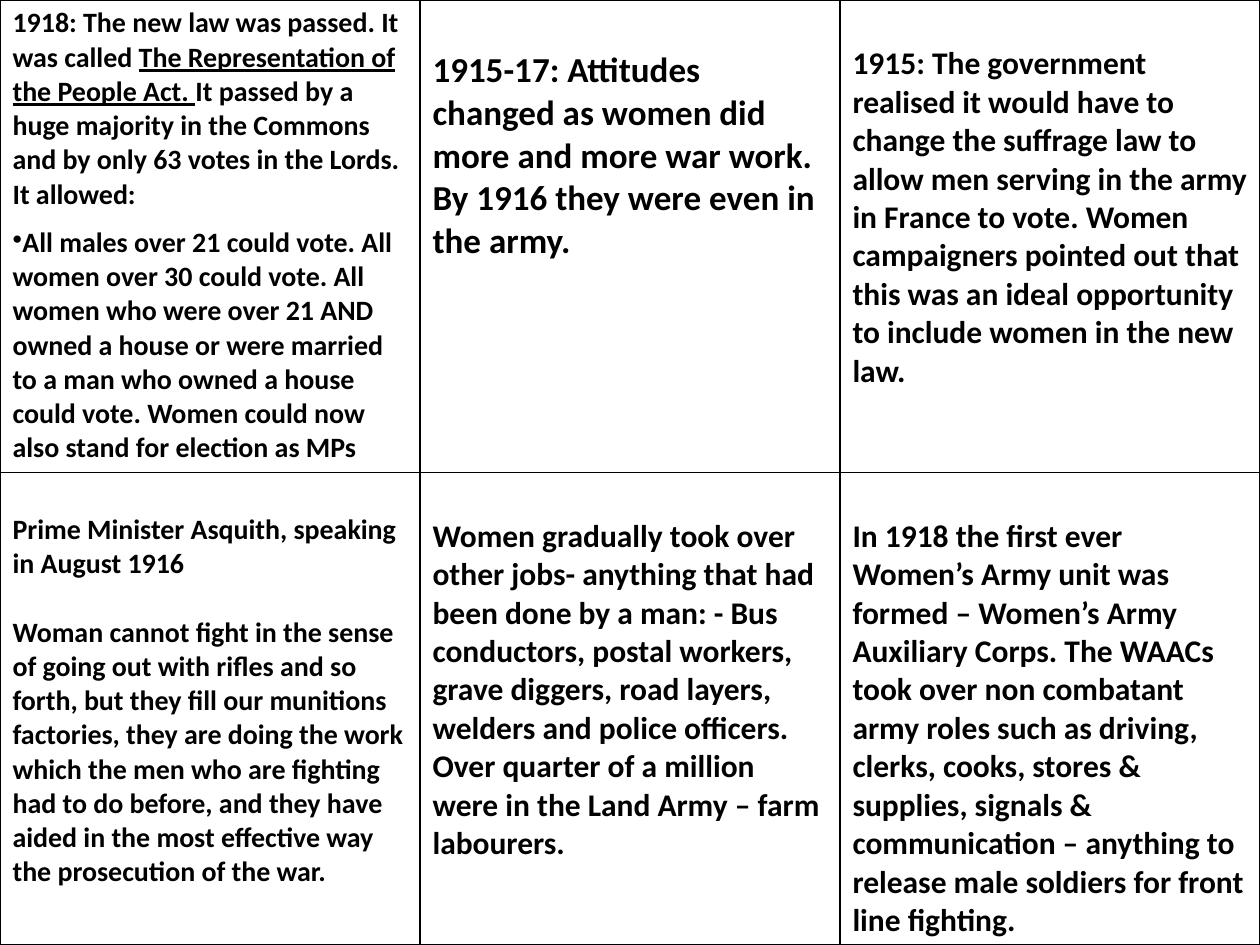
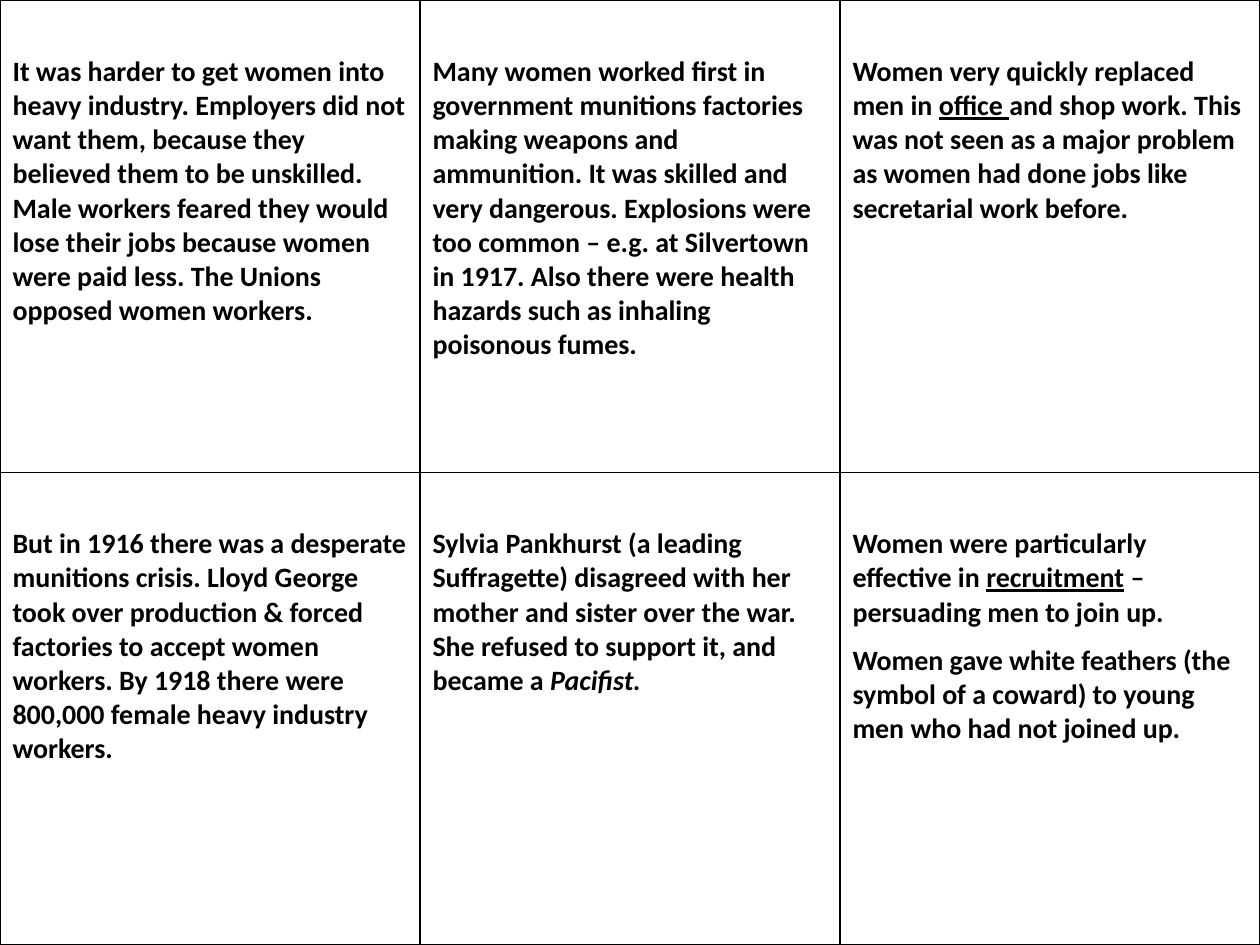
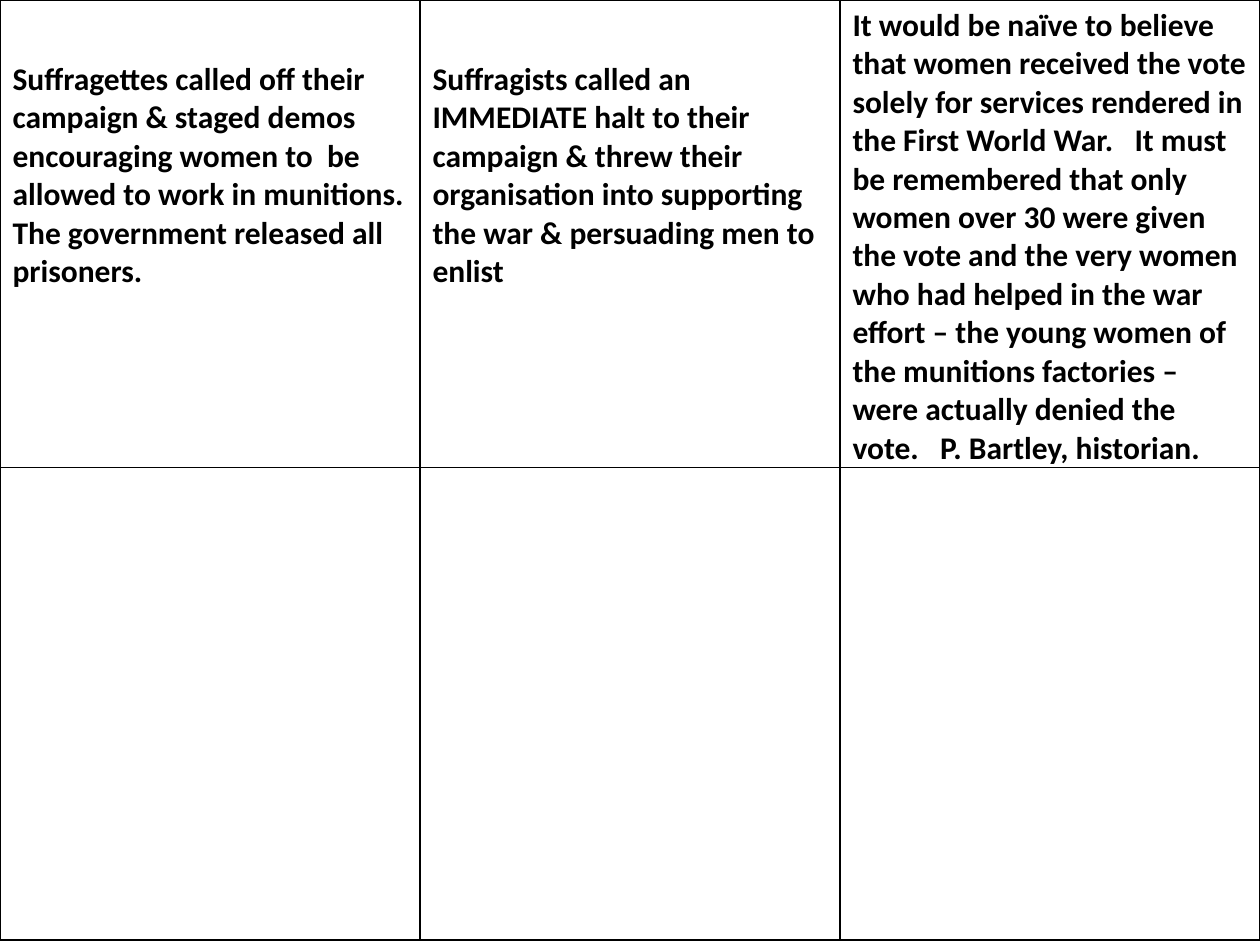
from dataclasses import dataclass
from itertools import product
from typing import NamedTuple

from lxml.etree import SubElement as Sub
from pptx import Presentation as Deck
from pptx.dml.color import RGBColor as Rgb
from pptx.oxml.ns import qn
from pptx.util import Inches, Pt

COLORS = {"ink": "000000", "paper": "FFFFFF"}
FONT = {"name": "Calibri", "bold": True}
PLAIN = {"first_row": False, "horz_banding": False}
COLS, ROWS = 3, 2
SIDE, TOP = 0.1, 0.05  # cell margins in inches
EDGE = 1  # border width in points

# Vertical gaps, as shares of the text size
LINE, HALF = 1.22, 0.5
DROP = LINE + HALF


class Run(NamedTuple):
    text: str
    style: dict = {}


class Para(NamedTuple):
    runs: tuple
    dot: bool = False


@dataclass
class Card:
    size: int
    paras: tuple
    lead: float = 0  # gap above the text
    gap: float = HALF  # gap between paragraphs


@dataclass
class Sheet:
    cards: tuple
    rows: tuple = (0.5, 0.5)  # shares of the slide height


LINED, SLANT = {"underline": True}, {"italic": True}


def say(*parts: str | Run, dot: bool = False) -> Para:
    return Para(tuple(Run(p) if isinstance(p, str) else p for p in parts), dot)


SHEETS = (
    # The new law and the changes behind it
    Sheet((
        Card(16, (
            say("1918: The new law was passed. It was called ",
                Run("The Representation of the People Act. ", LINED),
                "It passed by a huge majority in the Commons and by only "
                "63 votes in the Lords. It allowed:"),
            say("All males over 21 could vote. All women over 30 could vote. "
                "All women who were over 21 AND owned a house or were married "
                "to a man who owned a house could vote. Women could now also "
                "stand for election as MPs", dot=True))),
        Card(20, (
            say("1915-17: Attitudes changed as women did more and more war "
                "work. By 1916 they were even in the army."),), LINE),
        Card(18, (
            say("1915: The government realised it would have to change the "
                "suffrage law to allow men serving in the army in France to "
                "vote. Women campaigners pointed out that this was an ideal "
                "opportunity to include women in the new law."),), LINE),
        Card(16, (
            say("Prime Minister Asquith, speaking in August 1916"),
            say("Woman cannot fight in the sense of going out with rifles and "
                "so forth, but they fill our munitions factories, they are "
                "doing the work which the men who are fighting had to do "
                "before, and they have aided in the most effective way the "
                "prosecution of the war.")), LINE, LINE),
        Card(18, (
            say("Women gradually took over other jobs- anything that had been "
                "done by a man: - Bus conductors, postal workers, grave "
                "diggers, road layers, welders and police officers. Over "
                "quarter of a million were in the Land Army – farm "
                "labourers."),), LINE),
        Card(18, (
            say("In 1918 the first ever Women’s Army unit was formed – "
                "Women’s Army Auxiliary Corps. The WAACs took over non "
                "combatant army roles such as driving, clerks, cooks, stores "
                "& supplies, signals & communication – anything to release "
                "male soldiers for front line fighting."),), LINE),
    )),
    # Women at work
    Sheet((
        Card(16, (
            say("It was harder to get women into heavy industry. Employers "
                "did not want them, because they believed them to be "
                "unskilled. Male workers feared they would lose their jobs "
                "because women were paid less. The Unions opposed women "
                "workers."),), DROP),
        Card(16, (
            say("Many women worked first in government munitions factories "
                "making weapons and ammunition. It was skilled and very "
                "dangerous. Explosions were too common – e.g. at Silvertown "
                "in 1917. Also there were health hazards such as inhaling "
                "poisonous fumes."),), DROP),
        Card(16, (
            say("Women very quickly replaced men in ", Run("office ", LINED),
                "and shop work. This was not seen as a major problem as women "
                "had done jobs like secretarial work before."),), DROP),
        Card(16, (
            say("But in 1916 there was a desperate munitions crisis. Lloyd "
                "George took over production & forced factories to accept "
                "women workers. By 1918 there were 800,000 female heavy "
                "industry workers."),), DROP),
        Card(16, (
            say("Sylvia Pankhurst (a leading Suffragette) disagreed with her "
                "mother and sister over the war. She refused to support it, "
                "and became a ", Run("Pacifist.", SLANT)),), DROP),
        Card(16, (
            say("Women were particularly effective in ",
                Run("recruitment", LINED), " – persuading men to join up."),
            say("Women gave white feathers (the symbol of a coward) to young "
                "men who had not joined up.")), DROP),
    )),
    # Campaigns in wartime, with an empty lower row
    Sheet((
        Card(18, (
            say("Suffragettes called off their campaign & staged demos "
                "encouraging women to  be allowed to work in munitions. The "
                "government released all prisoners."),), DROP),
        Card(18, (
            say("Suffragists called an IMMEDIATE halt to their campaign & "
                "threw their organisation into supporting the war & "
                "persuading men to enlist"),), DROP),
        Card(18, (
            say("It would be naïve to believe that women received the vote "
                "solely for services rendered in the First World War.   It "
                "must be remembered that only women over 30 were given the "
                "vote and the very women who had helped in the war effort – "
                "the young women of the munitions factories – were actually "
                "denied the vote.   P. Bartley, historian."),)),
    ), (0.493, 0.5)),
)


def put(item, style: dict) -> None:
    for key, value in style.items():
        setattr(item, key, value)


def frame(cell) -> None:
    """Rule all four sides of a cell and fill it."""
    props = cell._tc.get_or_add_tcPr()
    for side in "LRTB":
        line = Sub(props, qn(f"a:ln{side}"), w=str(Pt(EDGE)))
        fill = Sub(line, qn("a:solidFill"))
        Sub(fill, qn("a:srgbClr"), val=COLORS["ink"])
    cell.fill.solid()
    cell.fill.fore_color.rgb = Rgb.from_string(COLORS["paper"])


def write(cell, card: Card) -> None:
    """Set a card's text in its cell."""
    put(cell, {"margin_left": Inches(SIDE), "margin_right": Inches(SIDE),
               "margin_top": Inches(TOP) + Pt(card.size * card.lead),
               "margin_bottom": 0})
    frame_text = cell.text_frame
    for n, para in enumerate(card.paras):
        if n:
            text = frame_text.add_paragraph()
            text.space_before = Pt(card.size * card.gap)
        else:
            text = frame_text.paragraphs[0]
        if para.dot:
            Sub(text._p.get_or_add_pPr(), qn("a:buChar"), char="•")
        for part in para.runs:
            run = text.add_run()
            run.text = part.text
            put(run.font, {**FONT, "size": Pt(card.size), **part.style})
            run.font.color.rgb = Rgb.from_string(COLORS["ink"])


def draw(deck, sheet: Sheet) -> None:
    """Add a slide filled by one grid of cards."""
    slide = deck.slides.add_slide(deck.slide_layouts[6])
    wide, high = deck.slide_width, deck.slide_height
    tall = int(high * sum(sheet.rows))
    grid = slide.shapes.add_table(ROWS, COLS, 0, 0, wide, tall).table
    put(grid, PLAIN)
    for row, share in zip(grid.rows, sheet.rows):
        row.height = int(high * share)
    for col in grid.columns:
        col.width = wide // COLS
    for n, (row, col) in enumerate(product(range(ROWS), range(COLS))):
        cell = grid.cell(row, col)
        frame(cell)
        if n < len(sheet.cards):
            write(cell, sheet.cards[n])


def main() -> None:
    deck = Deck()
    put(deck, {"slide_width": Inches(10), "slide_height": Inches(7.5)})
    for sheet in SHEETS:
        draw(deck, sheet)
    deck.save("out.pptx")


if __name__ == "__main__":
    main()
